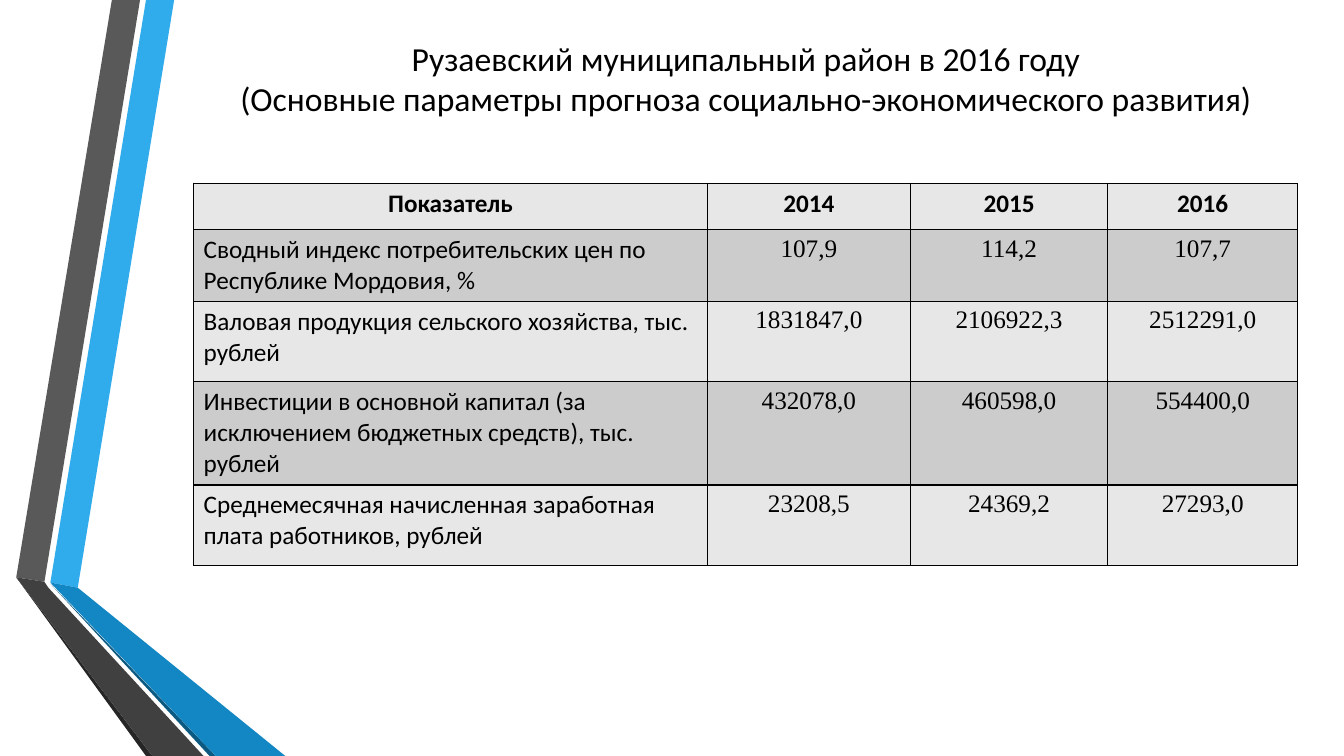
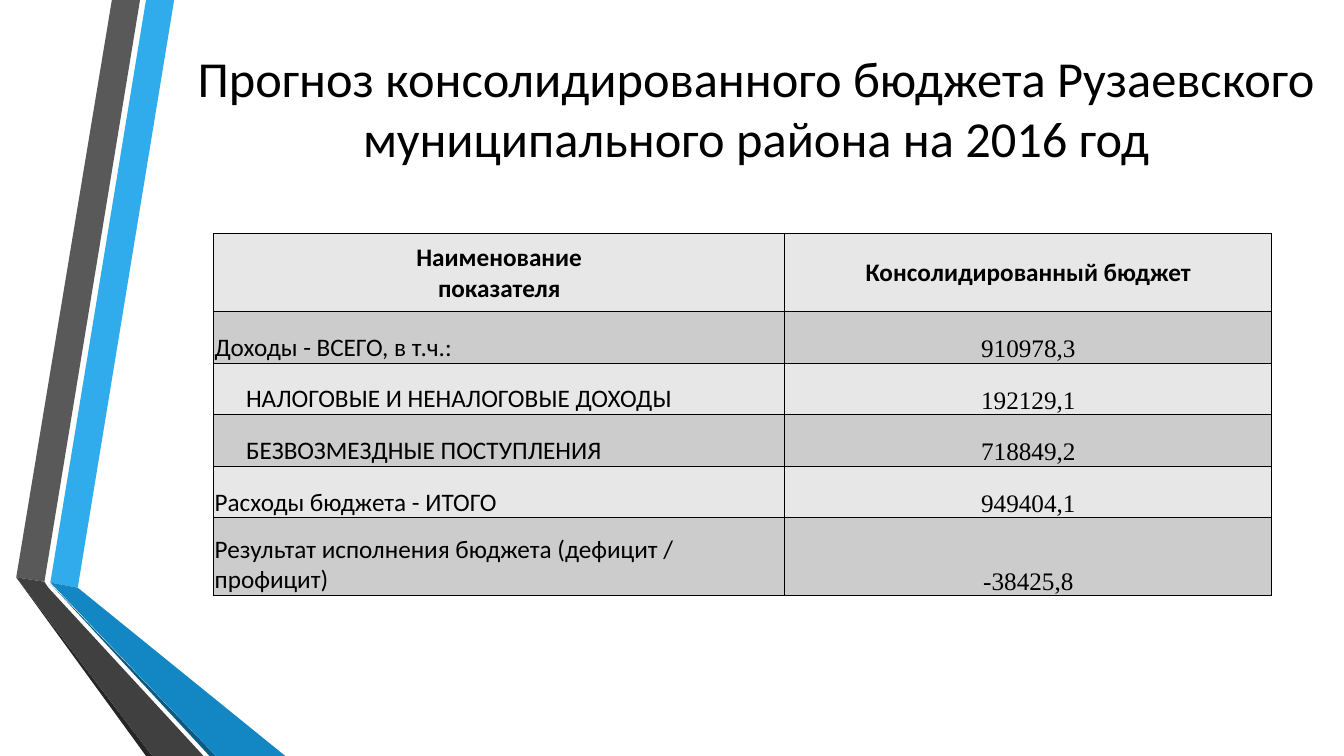
from dataclasses import dataclass

from lxml import etree
from pptx import Presentation
from pptx import util as u
from pptx.dml.color import RGBColor
from pptx.enum import text
from pptx.oxml import ns


@dataclass(frozen=True)
class Theme:
    ink: str = "000000"
    row_fills: tuple = ("E7E7E7", "CCCCCC")
    sky: str = "30ACEC"
    blue: str = "1287C3"
    navy: str = "0C5A82"
    grey: str = "595959"
    charcoal: str = "404040"
    soot: str = "262626"
    label_font: str = "Calibri"
    figure_font: str = "Times New Roman"
    subject_size: int = 24
    headline_size: int = 36
    table_size: int = 18
    border_width: int = 1


THEME = Theme()
WIDTH, HEIGHT = 33.87, 19.05

# Folded ribbons on the left edge: colour and outline in cm, back to front
RIBBONS = [
    (THEME.sky, [(1.27, 14.68), (1.96, 14.81), (4.39, 0), (3.68, 0)]),
    (THEME.grey, [(3.53, 0), (2.82, 0), (0.41, 14.55), (1.12, 14.66)]),
    (THEME.soot, [(0.41, 14.55), (3.68, HEIGHT), (3.84, HEIGHT)]),
    (THEME.navy, [(1.27, 14.71), (5.28, HEIGHT), (5.44, HEIGHT)]),
    (THEME.blue, [(1.27, 14.68), (5.44, HEIGHT), (7.19, HEIGHT), (1.96, 14.81)]),
    (THEME.charcoal, [(5.13, HEIGHT), (1.22, 14.81), (1.12, 14.66),
                      (0.41, 14.55), (3.84, HEIGHT)]),
]


class Deck:
    def __init__(self, theme):
        self.theme = theme
        self.prs = Presentation()
        self.prs.slide_width, self.prs.slide_height = u.Cm(WIDTH), u.Cm(HEIGHT)
        self.slide = None

    def new_slide(self):
        self.slide = self.prs.slides.add_slide(self.prs.slide_layouts[6])
        for color, outline in RIBBONS:
            self.ribbon(color, outline)

    def ribbon(self, color, outline):
        start, *rest = [(u.Cm(x), u.Cm(y)) for x, y in outline]
        builder = self.slide.shapes.build_freeform(*start)
        builder.add_line_segments(rest, close=True)
        band = builder.convert_to_shape()
        band.shadow.inherit = False
        band.fill.solid()
        band.fill.fore_color.rgb = RGBColor.from_string(color)
        band.line.fill.background()

    def set_words(self, frame, words, size, font, bold=False, centred=True):
        frame.text = words
        for paragraph in frame.paragraphs:
            paragraph.alignment = text.PP_ALIGN.CENTER if centred else text.PP_ALIGN.LEFT
            for run in paragraph.runs:
                run.font.size = u.Pt(size)
                run.font.name = font
                run.font.bold = bold
                run.font.color.rgb = RGBColor.from_string(self.theme.ink)

    def title(self, words, size, left, top, width, height):
        box = self.slide.shapes.add_textbox(*map(u.Cm, (left, top, width, height)))
        frame = box.text_frame
        frame.word_wrap = True
        frame.vertical_anchor = text.MSO_ANCHOR.MIDDLE
        self.set_words(frame, words, size, self.theme.label_font)

    def border(self, cell):
        properties = cell._tc.get_or_add_tcPr()
        for position, side in enumerate(("lnL", "lnR", "lnT", "lnB")):
            line = etree.Element(ns.qn(f"a:{side}"),
                                 w=str(u.Pt(self.theme.border_width)))
            fill = etree.SubElement(line, ns.qn("a:solidFill"))
            etree.SubElement(fill, ns.qn("a:srgbClr"), val=self.theme.ink)
            properties.insert(position, line)

    def table(self, records, left, top, widths, heights, tight=False, indented=()):
        """Header row first; a tight table has thin margins and low-set text."""
        grid = self.slide.shapes.add_table(
            len(records), len(widths), u.Cm(left), u.Cm(top),
            u.Cm(sum(widths)), u.Cm(sum(heights))).table
        for column, width in zip(grid.columns, widths):
            column.width = u.Cm(width)
        for row, height in zip(grid.rows, heights):
            row.height = u.Cm(height)
        for r, record in enumerate(records):
            for c, words in enumerate(record):
                cell = grid.cell(r, c)
                header, label = r == 0, c == 0
                cell.fill.solid()
                cell.fill.fore_color.rgb = RGBColor.from_string(
                    self.theme.row_fills[r % 2])
                self.border(cell)
                font = self.theme.label_font if header or label else self.theme.figure_font
                self.set_words(cell.text_frame, words, self.theme.table_size, font,
                               bold=header, centred=header or not label)
                if tight:
                    cell.margin_left = cell.margin_right = cell.margin_top = u.Cm(0.03)
                    cell.margin_bottom = 0
                    cell.vertical_anchor = (text.MSO_ANCHOR.MIDDLE if header
                                            else text.MSO_ANCHOR.BOTTOM)
                if label and r in indented:
                    cell.text_frame.paragraphs[0]._p.get_or_add_pPr().set(
                        "indent", str(u.Cm(0.79)))


def main():
    deck = Deck(THEME)

    # Forecast of social and economic development
    deck.new_slide()
    deck.title("Рузаевский муниципальный район в 2016 году\v"
               "(Основные параметры прогноза социально-экономического развития)",
               THEME.subject_size, 4.88, 0.69, 27.84, 2.57)
    indicators = [
        ("Показатель", "2014", "2015", "2016"),
        ("Сводный индекс потребительских цен по Республике Мордовия, %",
         "107,9", "114,2", "107,7"),
        ("Валовая продукция сельского хозяйства, тыс. рублей",
         "1831847,0", "2106922,3", "2512291,0"),
        ("Инвестиции в основной капитал (за исключением бюджетных средств), тыс. рублей",
         "432078,0", "460598,0", "554400,0"),
        ("Среднемесячная начисленная заработная плата работников, рублей",
         "23208,5", "24369,2", "27293,0"),
    ]
    deck.table(indicators, 4.88, 4.62, (12.95, 5.11, 4.98, 4.78),
               (1.17, 1.8, 2.03, 2.6, 2.03))

    # Consolidated budget
    deck.new_slide()
    deck.title("Прогноз консолидированного бюджета Рузаевского "
               "муниципального района на 2016 год",
               THEME.headline_size, 4.57, 1.02, 28.98, 3.38)
    budget = [
        ("Наименование\vпоказателя", "Консолидированный бюджет"),
        ("Доходы - ВСЕГО, в т.ч.:", "910978,3"),
        ("НАЛОГОВЫЕ И НЕНАЛОГОВЫЕ ДОХОДЫ", "192129,1"),
        ("БЕЗВОЗМЕЗДНЫЕ ПОСТУПЛЕНИЯ", "718849,2"),
        ("Расходы бюджета - ИТОГО", "949404,1"),
        ("Результат исполнения бюджета (дефицит / профицит)", "-38425,8"),
    ]
    deck.table(budget, 5.38, 5.89, (14.4, 12.27), (1.96, *[1.3] * 4, 1.96),
               tight=True, indented=(2, 3))

    deck.prs.save("out.pptx")


if __name__ == "__main__":
    main()
